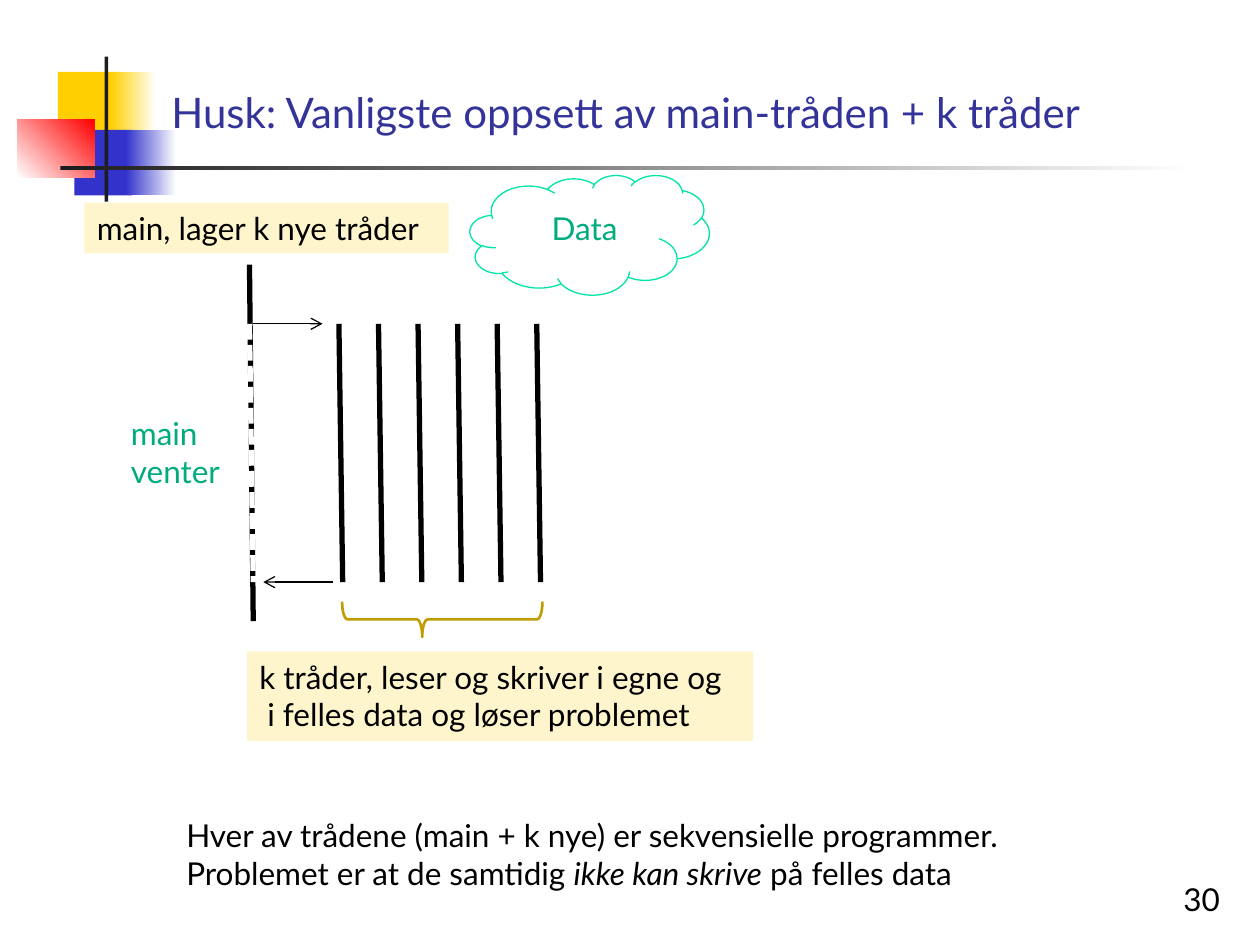
from lxml import etree
from pptx import Presentation
from pptx import util as u
from pptx.dml.color import RGBColor
from pptx.enum import dml, shapes, text
from pptx.oxml import ns

BLACK = RGBColor(0x00, 0x00, 0x00)
WHITE = RGBColor(0xFF, 0xFF, 0xFF)
CHARCOAL = RGBColor(0x1C, 0x1C, 0x1C)
YELLOW = RGBColor(0xFF, 0xCF, 0x01)
BLUE = RGBColor(0x33, 0x33, 0xCC)
RED = RGBColor(0xFF, 0x00, 0x00)
NAVY = RGBColor(0x33, 0x33, 0x99)
CREAM = RGBColor(0xFF, 0xF5, 0xCC)
GOLD = RGBColor(0xC0, 0x9C, 0x00)
MINT = RGBColor(0x00, 0xE4, 0xA8)
GREEN = RGBColor(0x00, 0xAB, 0x7E)

THREADS = 6
THREAD_GAP = 0.314
SLANT = 0.03
FORK_Y, JOIN_Y = 2.57, 4.62


class SlideBuilder:
    font = "Lato"
    body_size = 18
    title_size = 24

    def __init__(self, prs):
        self.slide = prs.slides.add_slide(prs.slide_layouts[5])

    def format_runs(self, frame, size, color):
        for paragraph in frame.paragraphs:
            for run in paragraph.runs:
                run.font.name = self.font
                run.font.size = u.Pt(size)
                run.font.color.rgb = color

    def title(self, wording, left, top, width, height):
        heading = self.slide.shapes.title
        heading.left, heading.top = u.Inches(left), u.Inches(top)
        heading.width, heading.height = u.Inches(width), u.Inches(height)
        frame = heading.text_frame
        frame.text = wording
        frame.vertical_anchor = text.MSO_ANCHOR.BOTTOM
        frame.paragraphs[0].alignment = text.PP_ALIGN.LEFT
        self.format_runs(frame, self.title_size, NAVY)

    def label(self, wording, left, top, width, height, color=BLACK, fill=None):
        box = self.slide.shapes.add_textbox(*map(u.Inches, (left, top, width, height)))
        frame = box.text_frame
        frame.text = wording
        frame.word_wrap = False
        frame.auto_size = text.MSO_AUTO_SIZE.SHAPE_TO_FIT_TEXT
        if fill is not None:
            box.fill.solid()
            box.fill.fore_color.rgb = fill
        self.format_runs(frame, self.body_size, color)
        return frame

    def page_number(self, number, left, top, width, height):
        frame = self.label(number, left, top, width, height)
        frame.auto_size = text.MSO_AUTO_SIZE.NONE
        frame.word_wrap = True
        frame.vertical_anchor = text.MSO_ANCHOR.BOTTOM
        frame.paragraphs[0].alignment = text.PP_ALIGN.RIGHT

    def block(self, left, top, width, height, start, end=None, angle=0):
        """Borderless rectangle, solid or fading from start to end."""
        rect = self.slide.shapes.add_shape(
            shapes.MSO_SHAPE.RECTANGLE, *map(u.Inches, (left, top, width, height)))
        rect.shadow.inherit = False
        rect.line.fill.background()
        if end is None:
            rect.fill.solid()
            rect.fill.fore_color.rgb = start
            return
        rect.fill.gradient()
        rect.fill.gradient_angle = angle
        for stop, color, position in zip(rect.fill.gradient_stops, (start, end), (0, 1)):
            stop.color.rgb = color
            stop.position = position

    def outline(self, kind, left, top, width, height, color, weight):
        """Unfilled preset shape."""
        figure = self.slide.shapes.add_shape(
            kind, *map(u.Inches, (left, top, width, height)))
        figure.shadow.inherit = False
        figure.fill.background()
        figure.line.color.rgb = color
        figure.line.width = u.Pt(weight)
        return figure

    def line(self, x1, y1, x2, y2, color=BLACK, weight=3.0, dash=None, arrow=False):
        connector = self.slide.shapes.add_connector(
            shapes.MSO_CONNECTOR.STRAIGHT, *map(u.Inches, (x1, y1, x2, y2)))
        connector.line.color.rgb = color
        connector.line.width = u.Pt(weight)
        if dash is not None:
            connector.line.dash_style = dash
        properties = connector._element.spPr
        if arrow:
            stroke = properties.find(ns.qn("a:ln"))
            etree.SubElement(stroke, ns.qn("a:tailEnd"), type="arrow")
        etree.SubElement(properties, ns.qn("a:effectLst"))


def draw_template(page):
    page.block(0.46, 0.57, 0.48, 0.52, YELLOW)
    page.block(0.88, 0.57, 0.36, 0.52, YELLOW, WHITE)
    page.block(0.59, 1.03, 0.46, 0.52, BLUE)
    page.block(1, 1.03, 0.4, 0.52, BLUE, WHITE)
    page.block(0.14, 0.95, 0.61, 0.46, WHITE, RED, angle=45)
    page.block(0.83, 0.45, 0.03, 1.15, CHARCOAL)
    page.block(0.48, 1.32, 9, 0.03, CHARCOAL, WHITE)


def draw_threads(page):
    main_x, first_x = 1.98, 2.69
    page.line(main_x, 2.1, main_x + SLANT, 4.93)
    page.line(main_x, FORK_Y, main_x + SLANT, JOIN_Y, WHITE,
              dash=dml.MSO_LINE.SQUARE_DOT)
    for index in range(THREADS):
        x = first_x + index * THREAD_GAP
        page.line(x, FORK_Y, x + SLANT, JOIN_Y)
    page.line(2.01, FORK_Y, 2.56, FORK_Y, weight=0.75, arrow=True)
    page.line(2.64, JOIN_Y, 2.09, JOIN_Y, weight=0.75, arrow=True)

    brace = page.outline(shapes.MSO_SHAPE.LEFT_BRACE, 3.37, 4.12, 0.28, 1.59, GOLD, 1.5)
    brace.rotation = 270
    brace.adjustments[0] = 0.154
    brace.adjustments[1] = 0.4


def draw_labels(page):
    page.label("main, lager k nye tråder", 0.67, 1.61, 2.89, 0.4, fill=CREAM)
    page.label("k tråder, leser og skriver i egne og\v i felles data og løser problemet",
               1.96, 5.17, 4.02, 0.71, fill=CREAM)
    page.outline(shapes.MSO_SHAPE.CLOUD, 3.73, 1.39, 1.9, 0.95, MINT, 0.75)
    page.label("Data", 4.28, 1.61, 0.72, 0.4, GREEN)
    page.label("main \vventer", 0.94, 3.24, 0.91, 0.71, GREEN)

    summary = page.label("Hver av trådene (main + k nye) er sekvensielle programmer.",
                         1.38, 6.43, 6.95, 0.71)
    problem = summary.add_paragraph()
    for wording, italic in (("Problemet er at de samtidig ", False),
                            ("ikke kan skrive", True),
                            (" på felles data", False)):
        run = problem.add_run()
        run.text = wording
        run.font.italic = italic
    page.format_runs(summary, page.body_size, BLACK)


def main():
    prs = Presentation()
    prs.slide_width, prs.slide_height = u.Inches(10), u.Inches(7.5)
    page = SlideBuilder(prs)
    draw_template(page)
    page.title("Husk: Vanligste oppsett av main-tråden + k tråder", 1.26, 0.23, 8.52, 0.91)
    page.page_number("30", 7.7, 6.83, 2.08, 0.5)
    draw_threads(page)
    draw_labels(page)
    prs.save("out.pptx")


if __name__ == "__main__":
    main()
